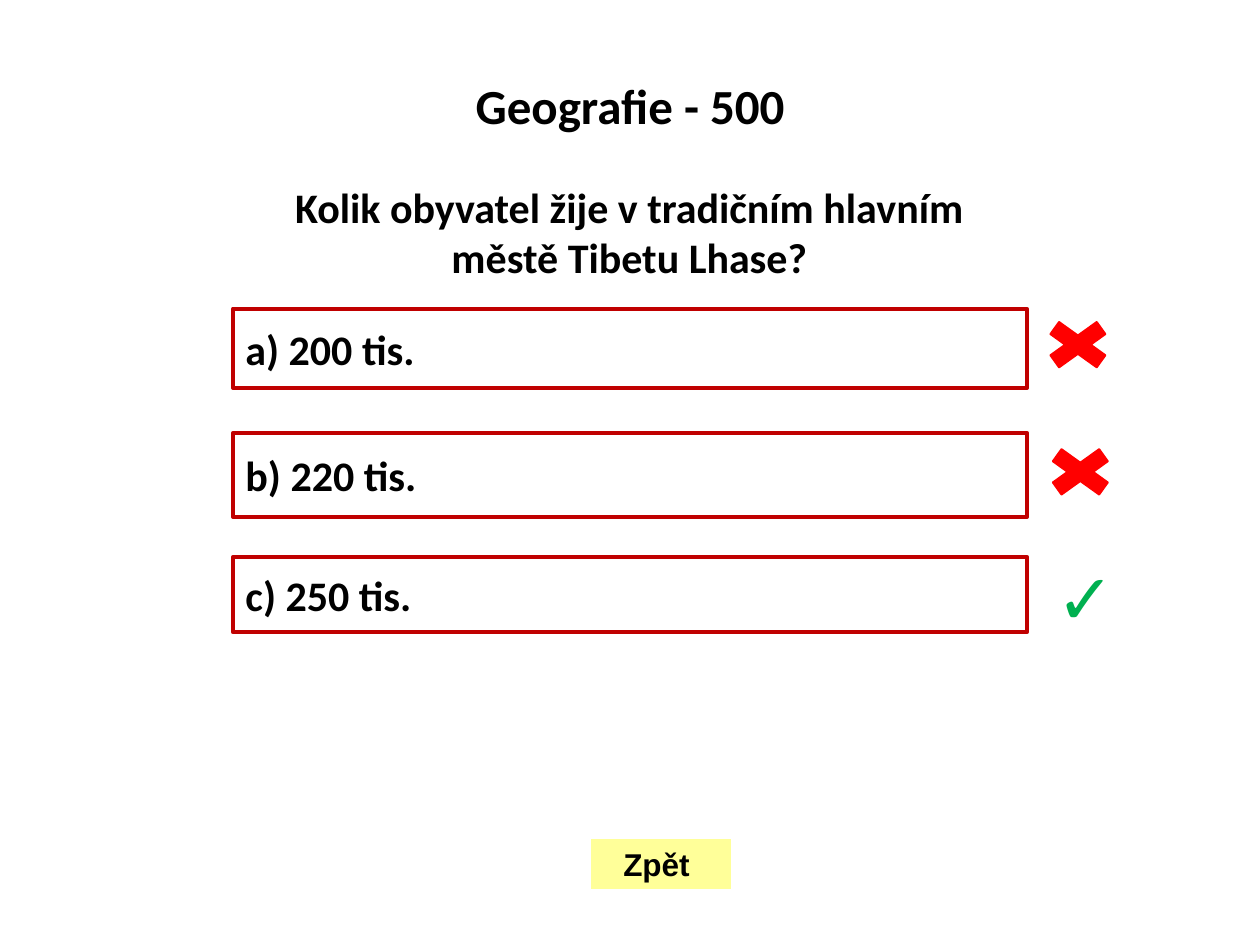
from dataclasses import dataclass

from lxml import etree
from pptx import Presentation
from pptx.dml.color import RGBColor
from pptx.enum import shapes, text
from pptx.oxml.ns import qn
from pptx.util import Pt


@dataclass(frozen=True)
class Theme:
    font: str = "Calibri"
    button_font: str = "Arial"
    ink: str = "000000"
    frame: str = "C00000"
    wrong: str = "FF0000"
    right: str = "00B050"
    button: str = "FFFF99"
    heading_size: int = 28
    text_size: int = 24
    button_size: int = 18
    tick_size: int = 40


THEME = Theme()
HEADING = "\u00a0Geografie\u00a0- 500\u00a0"
QUESTION = "Kolik obyvatel žije v tradičním hlavním městě Tibetu Lhase?"
BACK = "Zpět "
TICK = "✓"

# Boxes are left, top, width, height in points
HEADING_BOX = (0, 43.2, 720, 56.9)
QUESTION_BOX = (129.6, 100.1, 460.1, 65.5)
BACK_BOX = (337.7, 479.5, 79.9, 28.8)
ANSWER_LEFT, ANSWER_WIDTH = 133.2, 453.6
# Answer, top, height, box of its mark, whether it is correct
ANSWERS = [
    ("a) 200 tis.", 176.4, 45.4, (590.4, 178.6, 51.1, 36.7), False),
    ("b) 220 tis.", 247.3, 48.2, (591.8, 251.3, 51.1, 36.7), False),
    ("c) 250 tis.", 318.2, 43.2, (596.9, 313.2, 45.4, 55.4), True),
]


def points(box):
    return [Pt(v) for v in box]


def write(sp, words, size, font=THEME.font, color=THEME.ink,
          align=text.PP_ALIGN.CENTER, anchor=text.MSO_ANCHOR.TOP):
    tf = sp.text_frame
    tf.auto_size = text.MSO_AUTO_SIZE.NONE
    tf.word_wrap = True
    tf.vertical_anchor = anchor
    p = tf.paragraphs[0]
    p.text = words
    p.alignment = align
    p.space_before = Pt(0)
    p.font.name, p.font.size, p.font.bold = font, Pt(size), True
    p.font.color.rgb = RGBColor.from_string(color)
    return p


def fill_placeholder(sp, box, words, size):
    sp.left, sp.top, sp.width, sp.height = points(box)
    return write(sp, words, size)


def add_shape(slide, kind, box, fill=None, line=None, width=1):
    sp = slide.shapes.add_shape(kind, *points(box))
    sp.shadow.inherit = False
    if fill:
        sp.fill.solid()
        sp.fill.fore_color.rgb = RGBColor.from_string(fill)
    else:
        sp.fill.background()
    if line:
        sp.line.color.rgb = RGBColor.from_string(line)
        sp.line.width = Pt(width)
    else:
        sp.line.fill.background()
    return sp


def add_answer(slide, words, top, height, mark_box, correct):
    sp = add_shape(slide, shapes.MSO_SHAPE.ACTION_BUTTON_CUSTOM,
                   (ANSWER_LEFT, top, ANSWER_WIDTH, height),
                   line=THEME.frame, width=2.25)
    write(sp, words, THEME.text_size, align=text.PP_ALIGN.LEFT,
          anchor=text.MSO_ANCHOR.MIDDLE)
    if correct:
        tick = slide.shapes.add_textbox(*points(mark_box))
        write(tick, TICK, THEME.tick_size, THEME.button_font, THEME.right,
              text.PP_ALIGN.LEFT)
    else:
        add_shape(slide, shapes.MSO_SHAPE.MATH_MULTIPLY, mark_box,
                  THEME.wrong, THEME.wrong)


def main():
    prs = Presentation()
    prs.slide_width, prs.slide_height = Pt(720), Pt(540)
    slide = prs.slides.add_slide(prs.slide_layouts[1])

    p = fill_placeholder(slide.shapes.title, HEADING_BOX, HEADING,
                         THEME.heading_size)
    p.line_spacing = 0.9
    p = fill_placeholder(slide.placeholders[1], QUESTION_BOX, QUESTION,
                         THEME.text_size)
    pPr = p._p.get_or_add_pPr()
    pPr.set("marL", "0")
    pPr.set("indent", "0")
    bullet = etree.Element(qn("a:buNone"))
    pPr.find(qn("a:defRPr")).addprevious(bullet)

    for answer in ANSWERS:
        add_answer(slide, *answer)

    back = add_shape(slide, shapes.MSO_SHAPE.ACTION_BUTTON_CUSTOM, BACK_BOX,
                     THEME.button)
    write(back, BACK, THEME.button_size, THEME.button_font,
          anchor=text.MSO_ANCHOR.MIDDLE)
    prs.save("out.pptx")


if __name__ == "__main__":
    main()
